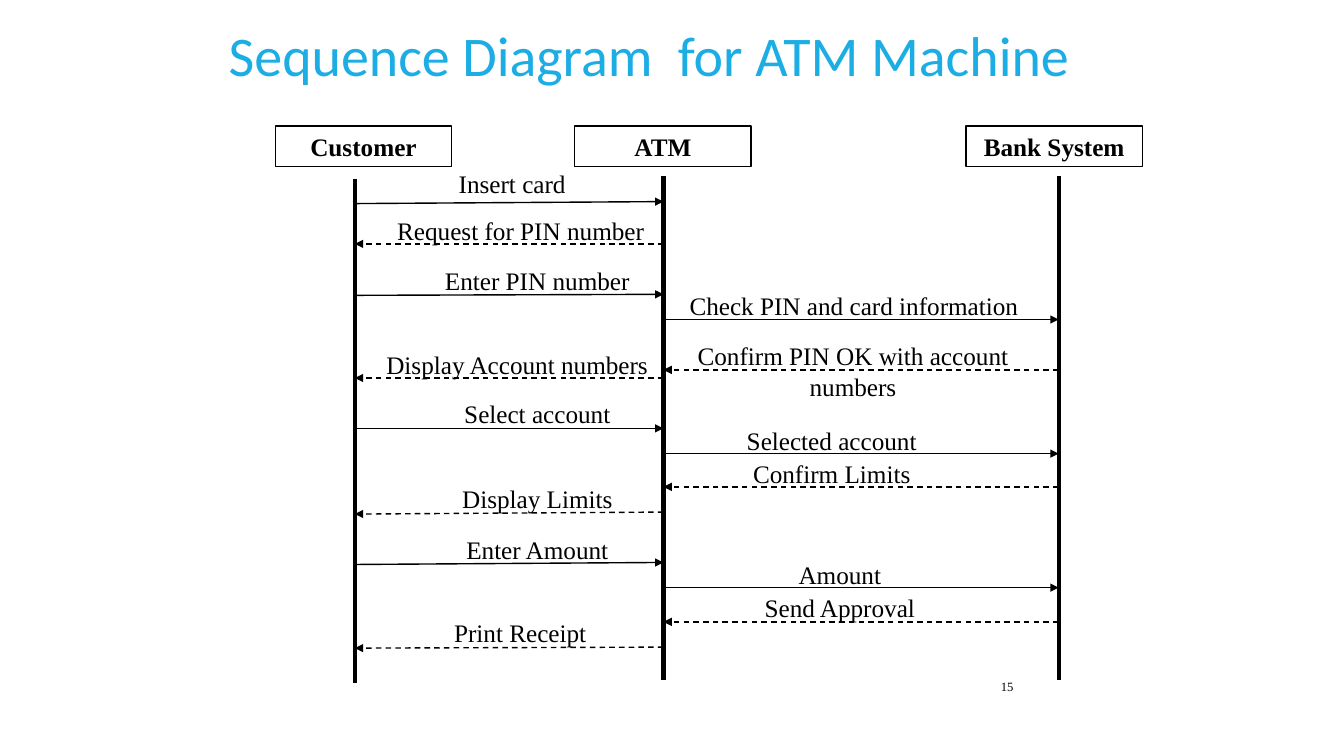
from lxml import etree
from pptx import Presentation
from pptx import util as u
from pptx.dml.color import RGBColor
from pptx.enum import dml, shapes, text
from pptx.oxml import ns

CUST, ATM, BANK = 3.52, 6.58, 10.5

ACTORS = [
    ("Customer", 2.73, CUST, 1.78),
    ("ATM", 5.7, ATM, 1.75),
    ("Bank System", 9.58, BANK, 1.75),
]

CALLS = [
    ("Insert card", CUST, ATM, 2.02, 2.0, 3.83, 1.62, 2.5),
    ("Enter PIN number", CUST, ATM, 2.93, 2.92, 4.08, 2.58, 2.5),
    ("Check PIN and card information", ATM, BANK, 3.17, 3.17, 6.58, 2.83, 3.78),
    ("Select account", CUST, ATM, 4.25, 4.25, 4.08, 3.9, 2.5),
    ("Selected account", ATM, BANK, 4.5, 4.5, 7, 4.17, 2.5),
    ("Enter Amount", CUST, ATM, 5.6, 5.58, 4.08, 5.25, 2.5),
    ("Amount", ATM, BANK, 5.83, 5.83, 7.08, 5.5, 2.5),
]

REPLIES = [
    ("Request for PIN number", ATM, CUST, 2.42, 2.42, 3.75, 2.09, 2.83),
    ("Confirm PIN OK with account numbers", BANK, ATM, 3.67, 3.67, 6.75, 3.33, 3.42),
    ("Display Account numbers", ATM, CUST, 3.75, 3.75, 3.68, 3.42, 2.9),
    ("Confirm Limits", BANK, ATM, 4.83, 4.83, 7, 4.5, 2.5),
    ("Display Limits", ATM, CUST, 5.08, 5.1, 4.08, 4.75, 2.5),
    ("Send Approval", BANK, ATM, 6.17, 6.17, 7.08, 5.83, 2.5),
    ("Print Receipt", ATM, CUST, 6.42, 6.43, 3.91, 6.08, 2.5),
]


def paint(code):
    return RGBColor.from_string(code)


class Board:
    font = "Times New Roman"
    ink = "000000"
    size = 18

    def __init__(self, slide):
        self.slide = slide

    def letter(self, shape, words, size=None, font=None, ink=None, bold=False,
               align=text.PP_ALIGN.CENTER, anchor=text.MSO_ANCHOR.TOP):
        frame = shape.text_frame
        frame.word_wrap = True
        frame.vertical_anchor = anchor
        frame.text = words
        para = frame.paragraphs[0]
        para.alignment = align
        style = para.runs[0].font
        style.name = font or self.font
        style.size = u.Pt(size or self.size)
        style.bold = bold
        style.color.rgb = paint(ink or self.ink)

    def label(self, words, left, top, width, height=0.4, **style):
        area = map(u.Inches, (left, top, width, height))
        self.letter(self.slide.shapes.add_textbox(*area), words, **style)

    def box(self, words, left, top, width, height):
        area = map(u.Inches, (left, top, width, height))
        shape = self.slide.shapes.add_shape(shapes.MSO_SHAPE.RECTANGLE, *area)
        shape.shadow.inherit = False
        shape.fill.background()
        shape.line.color.rgb = paint(self.ink)
        shape.line.width = u.Pt(1)
        self.letter(shape, words, bold=True)

    def line(self, x1, y1, x2, y2, width=1, dash=False, arrow=False):
        ends = map(u.Inches, (x1, y1, x2, y2))
        link = self.slide.shapes.add_connector(shapes.MSO_CONNECTOR.STRAIGHT, *ends)
        link.line.color.rgb = paint(self.ink)
        link.line.width = u.Pt(width)
        if dash:
            link.line.dash_style = dml.MSO_LINE.DASH
        props = link.element.spPr
        if arrow:
            stroke = props.find(ns.qn("a:ln"))
            etree.SubElement(stroke, ns.qn("a:tailEnd"), type="triangle")
        etree.SubElement(props, ns.qn("a:effectLst"))

    def message(self, words, start, end, y1, y2, left, top, width, dash):
        self.line(start, y1, end, y2, dash=dash, arrow=True)
        self.label(words, left, top, width)


def main():
    deck = Presentation()
    deck.slide_width = u.Inches(13.33)
    deck.slide_height = u.Inches(7.5)
    board = Board(deck.slides.add_slide(deck.slide_layouts[6]))
    board.label("Sequence Diagram  for ATM Machine", 2.17, 0.08, 8.82, 0.91,
                size=40, font="Calibri", ink="1CADE4",
                align=text.PP_ALIGN.LEFT, anchor=text.MSO_ANCHOR.MIDDLE)
    for name, left, axis, top in ACTORS:
        board.box(name, left, 1.25, 1.75, 0.4)
        board.line(axis, top, axis, top + 5, width=3)
    for rows, dash in ((CALLS, False), (REPLIES, True)):
        for row in rows:
            board.message(*row, dash=dash)
    board.label("15", 9.4, 6.61, 0.75, size=9,
                align=text.PP_ALIGN.RIGHT, anchor=text.MSO_ANCHOR.MIDDLE)
    deck.save("out.pptx")


if __name__ == "__main__":
    main()
